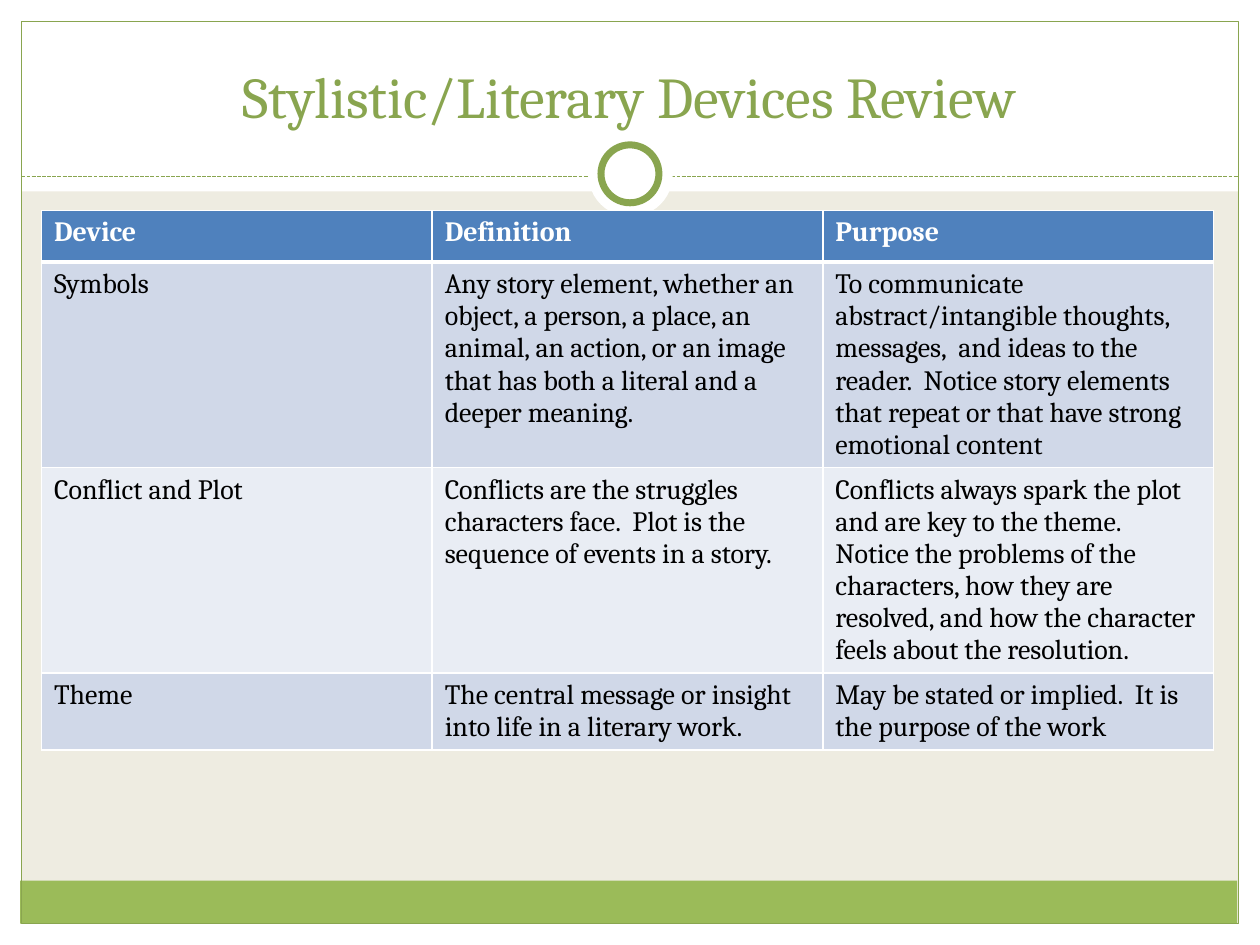
from pptx import Presentation
from pptx.dml.color import RGBColor
from pptx.enum.dml import MSO_LINE
from pptx.enum.shapes import MSO_CONNECTOR, MSO_SHAPE
from pptx.enum.text import MSO_ANCHOR, PP_ALIGN
from pptx.oxml.ns import qn
from pptx.util import Inches, Pt
from lxml import etree

RECT, OVAL = MSO_SHAPE.RECTANGLE, MSO_SHAPE.OVAL
STRAIGHT, DASHED = MSO_CONNECTOR.STRAIGHT, MSO_LINE.SQUARE_DOT
BOTTOM, CENTER = MSO_ANCHOR.BOTTOM, PP_ALIGN.CENTER
TITLE_ONLY = 5

FONT = "Cambria"
WHITE, BLACK, BEIGE = "FFFFFF", "000000", "EEECE1"
GREEN, DARK_GREEN = "9BBB59", "89A54F"
HEADER_BLUE, BANDS = "4F81BD", ("E9EDF4", "D0D8E8")

DEVICES = [
    ("Device", "Definition", "Purpose"),
    ("Symbols",
     "Any story element, whether an object, a person, a place, an animal, "
     "an action, or an image that has both a literal and a deeper meaning.",
     "To communicate abstract/intangible thoughts, messages,  and ideas to the "
     "reader.  Notice story elements that repeat or that have strong emotional content"),
    ("Conflict and Plot",
     "Conflicts are the struggles characters face.  Plot is the sequence of "
     "events in a story.",
     "Conflicts always spark the plot and are key to the theme.  Notice the "
     "problems of the characters, how they are resolved, and how the character "
     "feels about the resolution."),
    ("Theme",
     "The central message or insight into life in a literary work.",
     "May be stated or implied.  It is the purpose of the work"),
]


def color(hex_string):
    return RGBColor.from_string(hex_string)


def inches(*lengths):
    return [Inches(length) for length in lengths]


class SlideBuilder:
    """Holds the text style and the slide being built."""

    def __init__(self, slide, font):
        self.slide = slide
        self.font = font

    def background(self, fill):
        self.slide.background.fill.solid()
        self.slide.background.fill.fore_color.rgb = color(fill)

    def shape(self, kind, box, fill=None, line=None, width=0.75):
        shape = self.slide.shapes.add_shape(kind, *inches(*box))
        shape.shadow.inherit = False
        if fill:
            shape.fill.solid()
            shape.fill.fore_color.rgb = color(fill)
        else:
            shape.fill.background()
        if line:
            shape.line.color.rgb = color(line)
            shape.line.width = Pt(width)
        else:
            shape.line.fill.background()

    def dashed_line(self, start, end, line):
        connector = self.slide.shapes.add_connector(STRAIGHT, *inches(*start, *end))
        connector.line.color.rgb = color(line)
        connector.line.width = Pt(0.75)
        connector.line.dash_style = DASHED
        etree.SubElement(connector._element.spPr, qn("a:effectLst"))

    def format_text(self, paragraph, size, text_color, bold=False):
        for run in paragraph.runs:
            run.font.name = self.font
            run.font.size = Pt(size)
            run.font.bold = bold
            run.font.color.rgb = color(text_color)

    def title(self, text, box):
        title = self.slide.shapes.title
        title.left, title.top, title.width, title.height = inches(*box)
        frame = title.text_frame
        frame.text = text
        frame.vertical_anchor = BOTTOM
        frame.paragraphs[0].alignment = CENTER
        self.format_text(frame.paragraphs[0], 33, DARK_GREEN)
        # The title has to lie above the white header band.
        self.slide.shapes._spTree.append(title._element)

    def cell_borders(self, cell, **widths):
        """Draw white borders; they must precede the fill in the cell XML."""
        properties = cell._tc.get_or_add_tcPr()
        for index, (side, width) in enumerate(widths.items()):
            border = etree.Element(qn(f"a:ln{side}"), w=str(Pt(width)))
            fill = etree.SubElement(border, qn("a:solidFill"))
            etree.SubElement(fill, qn("a:srgbClr"), val=WHITE)
            properties.insert(index, border)

    def table(self, rows, left, top, column_width, row_height):
        columns = len(rows[0])
        frame = self.slide.shapes.add_table(
            len(rows), columns,
            *inches(left, top, column_width * columns, row_height * len(rows)))
        for r, texts in enumerate(rows):
            header = r == 0
            for c, text in enumerate(texts):
                cell = frame.table.cell(r, c)
                cell.text = text
                self.format_text(cell.text_frame.paragraphs[0], 16,
                                 WHITE if header else BLACK, header)
                cell.fill.solid()
                cell.fill.fore_color.rgb = color(HEADER_BLUE if header else BANDS[r % 2])
                self.cell_borders(cell, L=1, R=1, T=3 if r == 1 else 1,
                                  B=3 if header else 1)


def main():
    presentation = Presentation()
    presentation.slide_width, presentation.slide_height = inches(10, 7.5)
    slide = presentation.slides.add_slide(presentation.slide_layouts[TITLE_ONLY])
    builder = SlideBuilder(slide, FONT)

    builder.background(BEIGE)
    margin = 0.17
    for band in ((0, 7.5 - margin, 10, margin), (0, 0, 10, 1.52),
                 (0, 0, margin, 7.5), (10 - margin, 0, margin, 7.5)):
        builder.shape(RECT, band, fill=WHITE)
    builder.shape(RECT, (0.16, 6.99, 9.66, 0.34), fill=GREEN)
    builder.shape(RECT, (margin, margin, 9.66, 7.16), line=DARK_GREEN)
    builder.dashed_line((margin, 1.4), (10 - margin, 1.4), DARK_GREEN)
    builder.shape(OVAL, (4.67, 1.05, 0.67, 0.67), fill=WHITE)
    builder.shape(OVAL, (4.77, 1.15, 0.46, 0.46), fill=WHITE, line=DARK_GREEN, width=4)

    builder.title("Stylistic/Literary Devices Review", (0.33, 0.25, 9.33, 0.83))
    builder.table(DEVICES, left=0.33, top=1.67, column_width=3.1, row_height=0.41)

    presentation.save("out.pptx")


if __name__ == "__main__":
    main()
